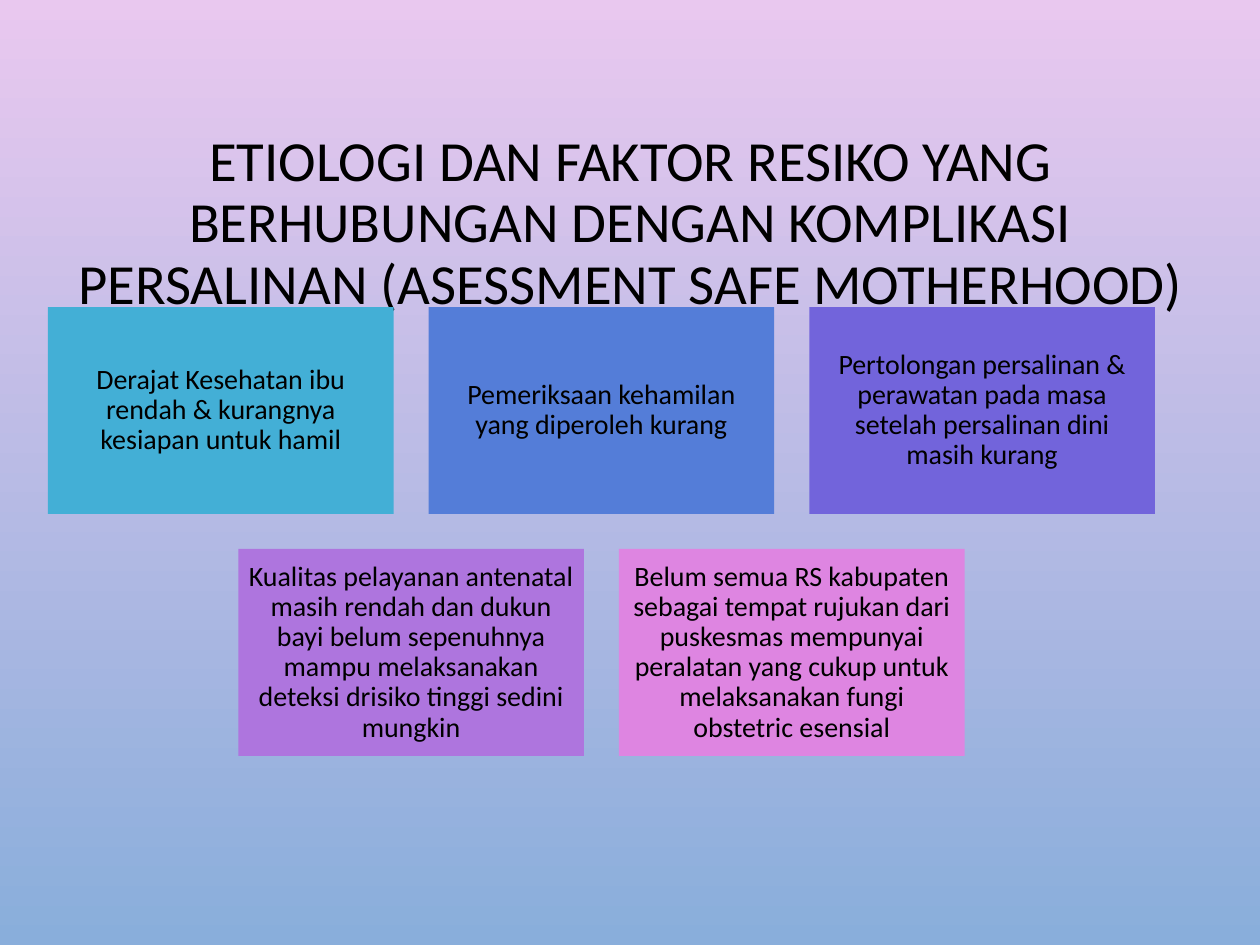
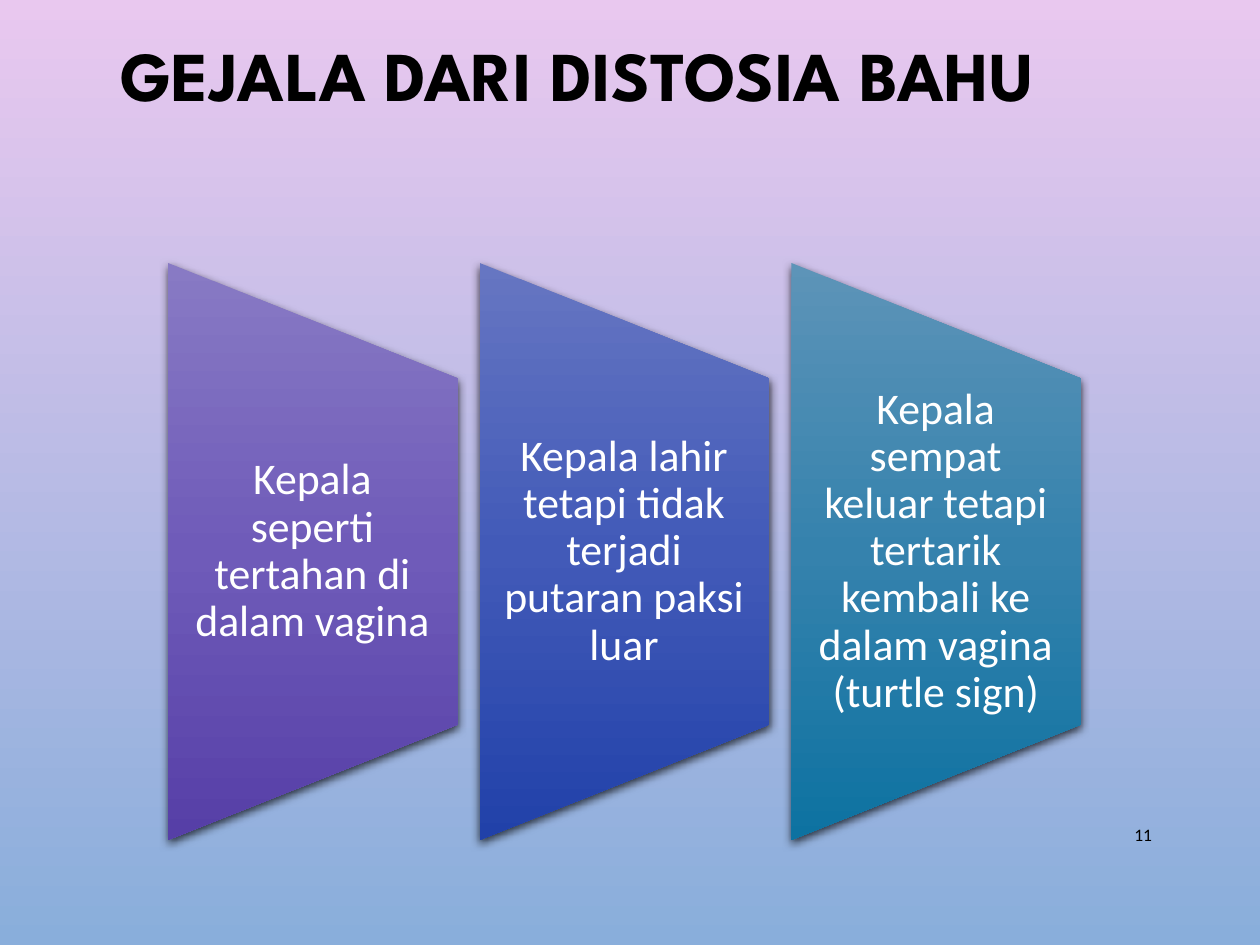
from copy import deepcopy

from lxml import etree
from pptx import Presentation
from pptx import util as u
from pptx.dml.color import RGBColor
from pptx.enum import shapes, text
from pptx.oxml.ns import qn

PX = u.Inches(1) / 126
HUES = {
    "ink": "000000", "white": "FFFFFF",
    "pink": "E9C8EF", "sky": "89AEDB",
    "aqua": "43AFD6", "blue": "547DD8", "iris": "7264DB",
    "mauve": "AE75DE", "rose": "DE85E1",
}
CAUSES = [
    [("Derajat Kesehatan ibu rendah & kurangnya kesiapan untuk hamil", "aqua"),
     ("Pemeriksaan kehamilan yang diperoleh kurang", "blue"),
     ("Pertolongan persalinan & perawatan pada masa setelah persalinan "
      "dini masih kurang", "iris")],
    [("Kualitas pelayanan antenatal masih rendah dan dukun bayi belum "
      "sepenuhnya mampu melaksanakan deteksi drisiko tinggi sedini mungkin",
      "mauve"),
     ("Belum semua RS kabupaten sebagai tempat rujukan dari puskesmas "
      "mempunyai peralatan yang cukup untuk melaksanakan fungi obstetric "
      "esensial", "rose")],
]
SIGNS = [
    ("Kepala seperti tertahan di dalam vagina",
     ("887AC4", "6F5BB9", "563FA7")),
    ("Kepala lahir tetapi tidak terjadi putaran paksi luar",
     ("6676C2", "425AB8", "2141A9")),
    ("Kepala sempat keluar tetapi tertarik kembali ke dalam vagina "
     "(turtle sign)", ("5D94B8", "3582AD", "0D72A1")),
]


def scale(*box):
    """Turn px lengths into EMU."""
    return [round(n * PX) for n in box]


def grade(fill, root, hues):
    """Fill from top to bottom with evenly spaced hues."""
    fill.gradient()
    fill.gradient_angle = 270
    stops = next(root.iter(qn("a:gsLst")))
    while len(stops) < len(hues):
        stops.append(deepcopy(stops[0]))
    stops.getparent().set("rotWithShape", "0")
    for i, (stop, hue) in enumerate(zip(fill.gradient_stops, hues)):
        stop.color.rgb = RGBColor.from_string(hue)
        stop.position = i / (len(hues) - 1)


def write(shape, words, size, hue="ink", face="Calibri", bold=False,
          align="CENTER", lead=0.9, pads=(13, 6, 13, 6)):
    """Set one run of text, centred in height, in a shape."""
    frame = shape.text_frame
    frame.word_wrap = True
    frame.auto_size = text.MSO_AUTO_SIZE.NONE
    frame.vertical_anchor = text.MSO_ANCHOR.MIDDLE
    (frame.margin_left, frame.margin_top,
     frame.margin_right, frame.margin_bottom) = scale(*pads)
    para = frame.paragraphs[0]
    para.alignment = text.PP_ALIGN[align]
    para.line_spacing = lead
    run = para.add_run()
    run.text = words
    run.font.size = u.Pt(size)
    run.font.name = face
    run.font.bold = bold
    run.font.color.rgb = RGBColor.from_string(HUES[hue])


def head(slide, box, words, size, **style):
    """Move the title placeholder to a box and fill it."""
    title = slide.shapes.title
    title.left, title.top, title.width, title.height = scale(*box)
    write(title, words, size, **style)


def shade(shape):
    """Give a shape a soft shadow below it."""
    shape.shadow.inherit = False
    cast = etree.SubElement(
        shape._element.spPr.find(qn("a:effectLst")), qn("a:outerShdw"),
        blurRad=str(u.Pt(5)), dist=str(u.Pt(2)), dir="5400000",
        algn="ctr", rotWithShape="0")
    tone = etree.SubElement(cast, qn("a:srgbClr"), val=HUES["ink"])
    etree.SubElement(tone, qn("a:alpha"), val="69000")


def tiles(slide, box, rows, gap):
    """Lay rows of coloured tiles in a box, each row centred."""
    left, top, width, height = box
    most = max(map(len, rows))
    wide = (width - gap * (most - 1)) / most
    tall = (height - gap * (len(rows) - 1)) / len(rows)
    for r, row in enumerate(rows):
        start = left + (most - len(row)) * (wide + gap) / 2
        for c, (words, hue) in enumerate(row):
            tile = slide.shapes.add_shape(
                shapes.MSO_SHAPE.RECTANGLE,
                *scale(start + c * (wide + gap), top + r * (tall + gap),
                       wide, tall))
            tile.shadow.inherit = False
            tile.fill.solid()
            tile.fill.fore_color.rgb = RGBColor.from_string(HUES[hue])
            tile.line.fill.background()
            write(tile, words, 16, pads=(9, 9, 9, 9))


def panel(slide, box, words, hues):
    """Draw a tapered panel on its side, with upright text over it."""
    left, top, wide, tall = box
    shape = slide.shapes.add_shape(
        shapes.MSO_SHAPE.FLOWCHART_MANUAL_OPERATION,
        *scale(left + (wide - tall) / 2, top + (tall - wide) / 2, tall, wide))
    shape.rotation = 270
    grade(shape.fill, shape._element, hues)
    shape.line.fill.background()
    shade(shape)
    label = slide.shapes.add_textbox(
        *scale(left, top + tall / 5, wide, tall * 3 / 5))
    write(label, words, 25, "white", pads=(21, 0, 22, 0))


def panels(slide, box, items, gap):
    """Set equal panels side by side in a box."""
    left, top, width, tall = box
    wide = (width - gap * (len(items) - 1)) / len(items)
    for i, (words, hues) in enumerate(items):
        panel(slide, (left + i * (wide + gap), top, wide, tall), words, hues)


def folio(slide, box, words):
    """Write the page number."""
    write(slide.shapes.add_textbox(*scale(*box)), words, 10,
          align="RIGHT", lead=1.0)


def main():
    """Build and save the two slides."""
    deck = Presentation()
    deck.slide_width, deck.slide_height = scale(1260, 945)
    back = deck.slide_master
    grade(back.background.fill, back._element, (HUES["pink"], HUES["sky"]))
    plain = deck.slide_layouts.get_by_name("Title Only")

    risk = deck.slides.add_slide(plain)
    head(risk, (48, 156, 1165, 137),
         "ETIOLOGI DAN FAKTOR RESIKO YANG BERHUBUNGAN DENGAN KOMPLIKASI "
         "PERSALINAN (ASESSMENT SAFE MOTHERHOOD)", 32.4)
    tiles(risk, (48, 307, 1107, 449), CAUSES, 35)

    signs = deck.slides.add_slide(plain)
    head(signs, (63, 0, 1029, 157), "GEJALA DARI DISTOSIA BAHU", 40,
         face="League Spartan", bold=True)
    panels(signs, (168, 263, 913, 577), SIGNS, 22)
    folio(signs, (1086, 810, 79, 50), "11")
    deck.save("out.pptx")


if __name__ == "__main__":
    main()
